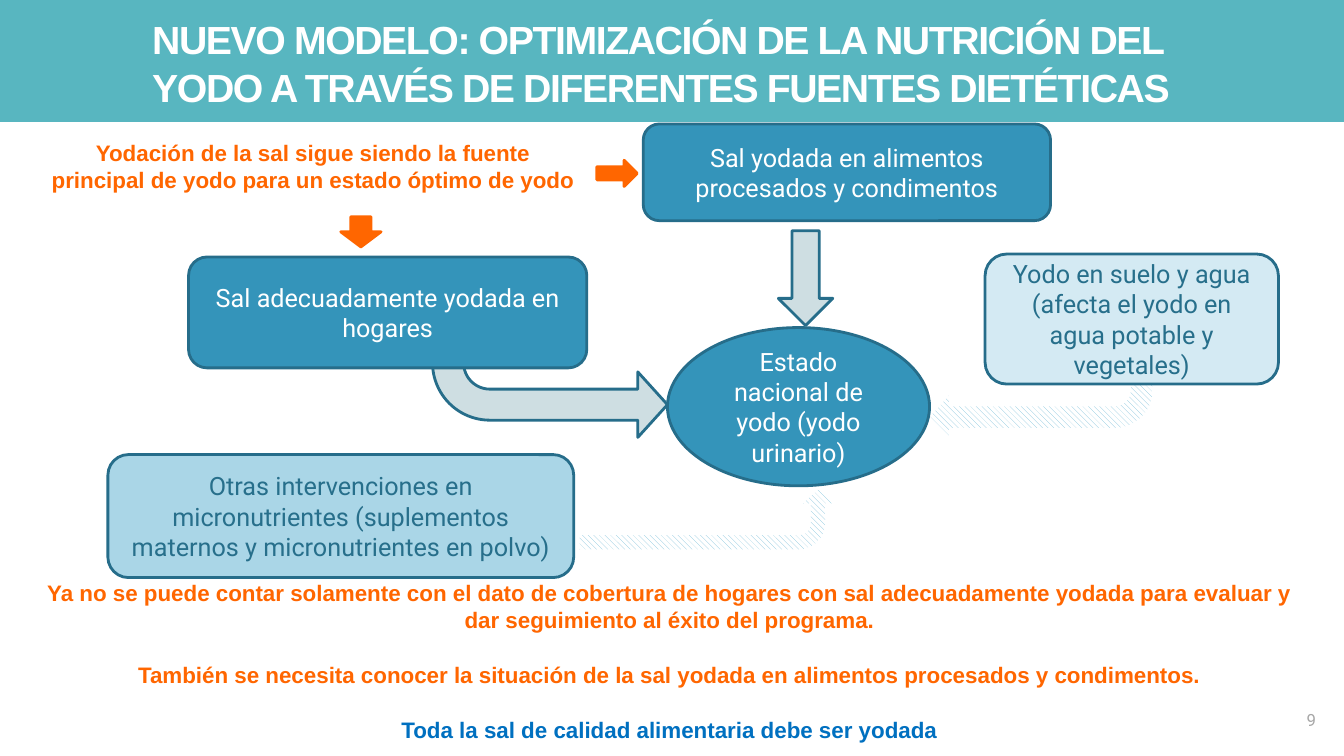
from pptx import Presentation
from pptx import util as u
from pptx.dml.color import RGBColor
from pptx.enum import dml, shapes, text
from pptx.oxml.ns import qn

WHITE = RGBColor(0xFF, 0xFF, 0xFF)
TEAL = RGBColor(0x58, 0xB6, 0xC0)
BLUE = RGBColor(0x34, 0x94, 0xBA)
MID_BLUE = RGBColor(0xAA, 0xD6, 0xE7)
PALE_BLUE = RGBColor(0xD4, 0xEA, 0xF3)
HATCH = RGBColor(0x7F, 0xC1, 0xDB)
OUTLINE = RGBColor(0x26, 0x6D, 0x8A)
DARK_TEXT = RGBColor(0x27, 0x6F, 0x8B)
GREY_BLUE = RGBColor(0xCE, 0xDE, 0xE2)
ORANGE = RGBColor(0xFF, 0x66, 0x00)
STRONG_BLUE = RGBColor(0x00, 0x70, 0xC0)
GREY = RGBColor(0xA7, 0xA7, 0xA7)

SHAPE = shapes.MSO_SHAPE
ALIGN = text.PP_ALIGN
ANCHOR = text.MSO_ANCHOR


class SlideBuilder:
    box_font = "Roboto"
    head_font = "Arial"

    def __init__(self, slide):
        self.slide = slide

    def shape(self, kind, at, fill, line=None):
        sp = self.slide.shapes.add_shape(kind, *map(u.Inches, at))
        sp.shadow.inherit = False
        if fill is HATCH:
            sp.fill.patterned()
            sp.fill.pattern = dml.MSO_PATTERN.WIDE_DOWNWARD_DIAGONAL
            sp.fill.fore_color.rgb = HATCH
            sp.fill.back_color.rgb = WHITE
        else:
            sp.fill.solid()
            sp.fill.fore_color.rgb = fill
        if line is None:
            sp.line.fill.background()
        else:
            sp.line.color.rgb = line
            sp.line.width = u.Pt(2)
        return sp

    def node(self, kind, at, fill, label, color=WHITE):
        sp = self.shape(kind, at, fill, OUTLINE)
        tf = sp.text_frame
        tf.word_wrap = True
        tf.vertical_anchor = ANCHOR.MIDDLE
        self.paragraph(tf.paragraphs[0], label, 18, color, self.box_font)

    def bent_arrow(self, at, fill, line=None, shaft=0.237, rotation=0, flip=True):
        sp = self.shape(SHAPE.BENT_ARROW, at, fill, line)
        for i, value in enumerate((shaft, 0.25, 0.226, 0.438)):
            sp.adjustments[i] = value
        sp.rotation = rotation
        if flip:
            sp._element.spPr.find(qn("a:xfrm")).set("flipV", "1")

    def paragraph(self, p, label, size, color, font, bold=False, align=ALIGN.CENTER):
        p.text = label
        p.alignment = align
        p.font.size = u.Pt(size)
        p.font.name = font
        p.font.bold = bold
        p.font.color.rgb = color

    def text_box(self, at, anchor=ANCHOR.TOP, inset=None, wrap=True):
        tf = self.slide.shapes.add_textbox(*map(u.Inches, at)).text_frame
        tf.word_wrap = wrap
        tf.vertical_anchor = anchor
        if inset is not None:
            tf.margin_left = tf.margin_right = u.Inches(inset)
            tf.margin_top = tf.margin_bottom = u.Inches(inset)
        return tf

    def notes(self, at, lines, gap=0):
        tf = self.text_box(at)
        for i, (label, color) in enumerate(lines):
            p = tf.add_paragraph() if i else tf.paragraphs[0]
            self.paragraph(p, label, 16, color, self.head_font, True)
            if i:
                p.space_before = u.Pt(gap)

    def title(self, at, label):
        p = self.text_box(at, ANCHOR.BOTTOM, 0).paragraphs[0]
        self.paragraph(p, label, 28, WHITE, self.head_font, True, ALIGN.LEFT)
        p.line_spacing = 1.04
        for r in p.runs:
            r._r.get_or_add_rPr().set("spc", "-100")

    def number(self, at, label):
        p = self.text_box(at, ANCHOR.MIDDLE, 0.05, False).paragraphs[0]
        self.paragraph(p, label, 12, GREY, self.box_font, align=ALIGN.RIGHT)


def main():
    prs = Presentation()
    prs.slide_width, prs.slide_height = u.Inches(13.33), u.Inches(7.5)
    s = SlideBuilder(prs.slides.add_slide(prs.slide_layouts[6]))

    # Title band
    s.shape(SHAPE.RECTANGLE, (0, 0, 13.33, 1.21), TEAL)
    s.title((1.51, 0.13, 10.21, 0.97),
            "NUEVO MODELO: OPTIMIZACIÓN DE LA NUTRICIÓN DEL YODO "
            "A TRAVÉS DE DIFERENTES FUENTES DIETÉTICAS")

    # National status and salt in households
    s.node(SHAPE.OVAL, (6.62, 3.25, 2.6, 1.57), BLUE,
           "Estado nacional de yodo (yodo urinario)")
    s.bent_arrow((4.29, 3.04, 2.33, 1.3), GREY_BLUE, OUTLINE)
    s.node(SHAPE.ROUNDED_RECTANGLE, (1.87, 2.55, 3.95, 1.1), BLUE,
           "Sal adecuadamente yodada en hogares")

    # Soil and water
    s.bent_arrow((9.22, 3.5, 2.21, 0.85), HATCH, shaft=0.25, rotation=180, flip=False)
    s.node(SHAPE.ROUNDED_RECTANGLE, (9.77, 2.52, 2.91, 1.29), PALE_BLUE,
           "Yodo en suelo y agua (afecta el yodo en agua potable y vegetales)",
           DARK_TEXT)

    # Other interventions
    s.node(SHAPE.ROUNDED_RECTANGLE, (1.07, 4.51, 4.62, 1.22), MID_BLUE,
           "Otras intervenciones en micronutrientes (suplementos maternos "
           "y micronutrientes en polvo)", DARK_TEXT)
    s.bent_arrow((6.71, 3.9, 0.59, 2.51), HATCH, rotation=270)

    # Processed foods
    s.shape(SHAPE.DOWN_ARROW, (7.72, 2.29, 0.54, 0.94), GREY_BLUE, OUTLINE)
    s.node(SHAPE.ROUNDED_RECTANGLE, (6.38, 1.23, 4.04, 0.96), BLUE,
           "Sal yodada en alimentos procesados y condimentos")

    # Main source with its two arrows
    s.notes((0.37, 1.33, 5.47, 0.64), [
        ("Yodación de la sal sigue siendo la fuente principal de yodo "
         "para un estado óptimo de yodo", ORANGE)])
    s.shape(SHAPE.DOWN_ARROW, (3.38, 2.15, 0.4, 0.3), ORANGE, ORANGE)
    s.shape(SHAPE.RIGHT_ARROW, (5.92, 1.59, 0.4, 0.26), ORANGE, ORANGE)

    # Conclusions and slide number
    s.notes((0.37, 5.7, 12.54, 1.72), [
        ("Ya no se puede contar solamente con el dato de cobertura de hogares "
         "con sal adecuadamente yodada para evaluar y dar seguimiento al éxito "
         "del programa.", ORANGE),
        ("También se necesita conocer la situación de la sal yodada en alimentos "
         "procesados y condimentos.", ORANGE),
        ("Toda la sal de calidad alimentaria debe ser yodada", STRONG_BLUE),
    ], gap=20)
    s.number((12.91, 6.99, 0.19, 0.3), "9")

    prs.save("out.pptx")


if __name__ == "__main__":
    main()
